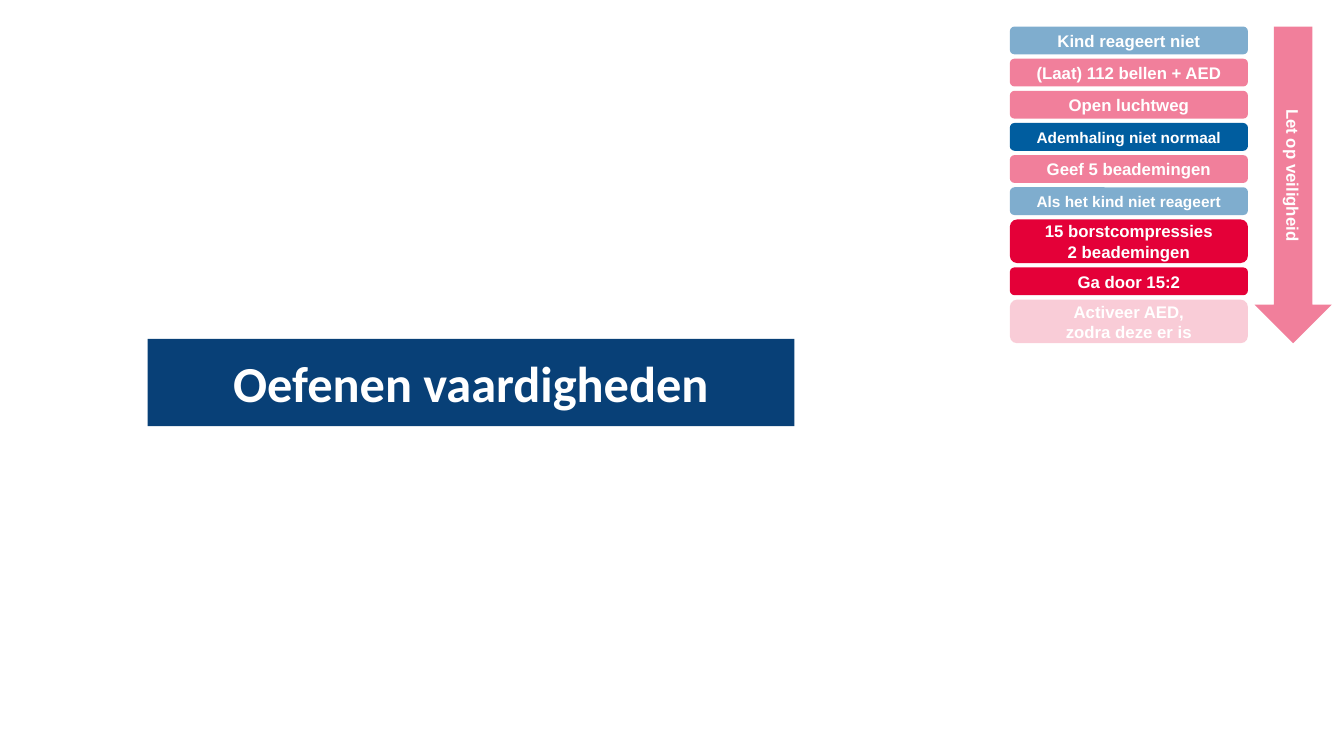
from dataclasses import dataclass

import lxml.etree
import pptx
import pptx.dml.color
import pptx.enum.shapes
import pptx.enum.text
import pptx.oxml.ns
import pptx.shapes.autoshape
import pptx.shapes.group
import pptx.util
from pptx.util import Cm

COLOURS = {"navy": "084077", "blue": "005D9F", "red": "E40038", "white": "FFFFFF"}
SHAPES = pptx.enum.shapes.MSO_SHAPE

# Column of steps, in centimetres
STEP_LEFT, STEP_TOP, STEP_WIDTH, STEP_GAP = 25.45, 0.67, 6.0, 0.11
LINE_HEIGHTS = {1: 0.7, 2: 1.1}


@dataclass
class Step:
    text: str
    colour: str
    opacity: int = 100
    size: int = 12

    @property
    def height(self) -> float:
        return LINE_HEIGHTS[len(self.text.splitlines())]


STEPS = [
    Step("Kind reageert niet", "blue", 50),
    Step("(Laat) 112 bellen + AED", "red", 50),
    Step("Open luchtweg", "red", 50),
    Step("Ademhaling niet normaal", "blue", size=11),
    Step("Geef 5 beademingen", "red", 50),
    Step("Als het kind niet reageert", "blue", 50, 11),
    Step("15 borstcompressies\n2 beademingen", "red"),
    Step("Ga door 15:2", "red"),
    Step("Activeer AED,\nzodra deze er is", "red", 20),
]
SAFETY = Step("Let op veiligheid", "red", 50)


def rgb(name: str) -> pptx.dml.color.RGBColor:
    return pptx.dml.color.RGBColor.from_string(COLOURS[name])


def format_shape(shape, step: Step, font_name: str) -> None:
    """Fill the shape and set its centred bold white text."""
    shape.fill.solid()
    shape.fill.fore_color.rgb = rgb(step.colour)
    shape.line.fill.background()
    if step.opacity < 100:
        colour = shape.element.spPr.find(".//" + pptx.oxml.ns.qn("a:srgbClr"))
        alpha = lxml.etree.SubElement(colour, pptx.oxml.ns.qn("a:alpha"))
        alpha.set("val", str(step.opacity * 1000))
    frame = shape.text_frame
    frame.text = step.text
    frame.word_wrap = True
    frame.auto_size = pptx.enum.text.MSO_AUTO_SIZE.NONE
    frame.vertical_anchor = pptx.enum.text.MSO_ANCHOR.MIDDLE
    frame.margin_left = frame.margin_right = frame.margin_top = frame.margin_bottom = 0
    for paragraph in frame.paragraphs:
        paragraph.alignment = pptx.enum.text.PP_ALIGN.CENTER
        paragraph.font.name = font_name
        paragraph.font.size = pptx.util.Pt(step.size)
        paragraph.font.bold = True
        paragraph.font.color.rgb = rgb("white")


def add_step(group: pptx.shapes.group.GroupShape, kind: SHAPES, step: Step,
             left: float, top: float, width: float,
             height: float) -> pptx.shapes.autoshape.Shape:
    shape = group.shapes.add_shape(kind, Cm(left), Cm(top), Cm(width), Cm(height))
    shape.shadow.inherit = False
    format_shape(shape, step, "Arial")
    return shape


def add_title(slide) -> None:
    """Turn the title placeholder into a rounded bar."""
    title = slide.shapes.title
    title.left, title.top, title.width, title.height = Cm(3.72), Cm(8.54), Cm(16.3), Cm(2.2)
    geometry = lxml.etree.SubElement(title.element.spPr, pptx.oxml.ns.qn("a:prstGeom"))
    geometry.set("prst", "roundRect")
    lxml.etree.SubElement(geometry, pptx.oxml.ns.qn("a:avLst"))
    format_shape(title, Step("Oefenen vaardigheden", "navy", size=36), "Calibri")


def main() -> None:
    presentation = pptx.Presentation()
    presentation.slide_width, presentation.slide_height = Cm(33.87), Cm(19.05)
    slide = presentation.slides.add_slide(presentation.slide_layouts[5])
    add_title(slide)

    # Steps, stacked with equal gaps
    group = slide.shapes.add_group_shape()
    top = STEP_TOP
    for step in STEPS:
        add_step(group, SHAPES.ROUNDED_RECTANGLE, step,
                 STEP_LEFT, top, STEP_WIDTH, step.height)
        top += step.height + STEP_GAP

    # Safety arrow, as tall as the column
    arrow = add_step(group, SHAPES.DOWN_ARROW, SAFETY,
                     31.62, STEP_TOP, 1.94, top - STEP_GAP - STEP_TOP)
    arrow.text_frame._txBody.bodyPr.set("vert", "vert")

    presentation.save("out.pptx")


if __name__ == "__main__":
    main()
